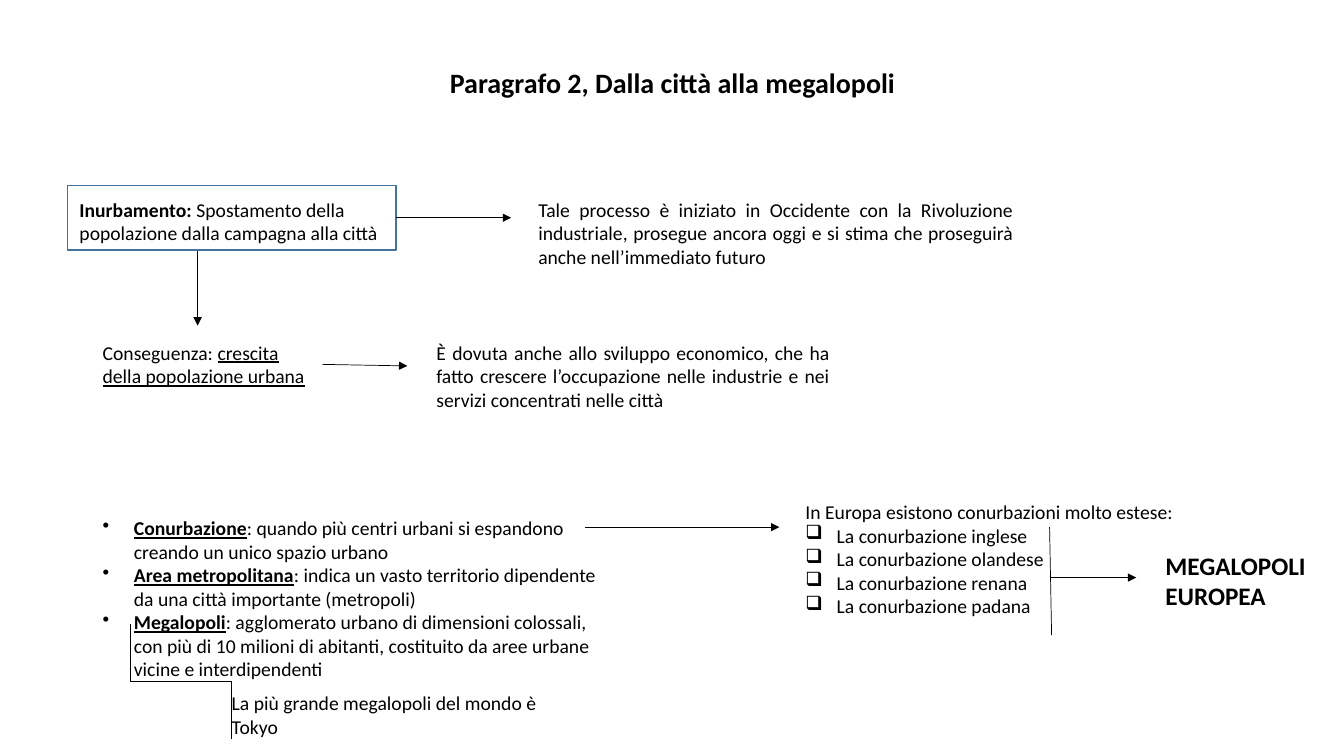
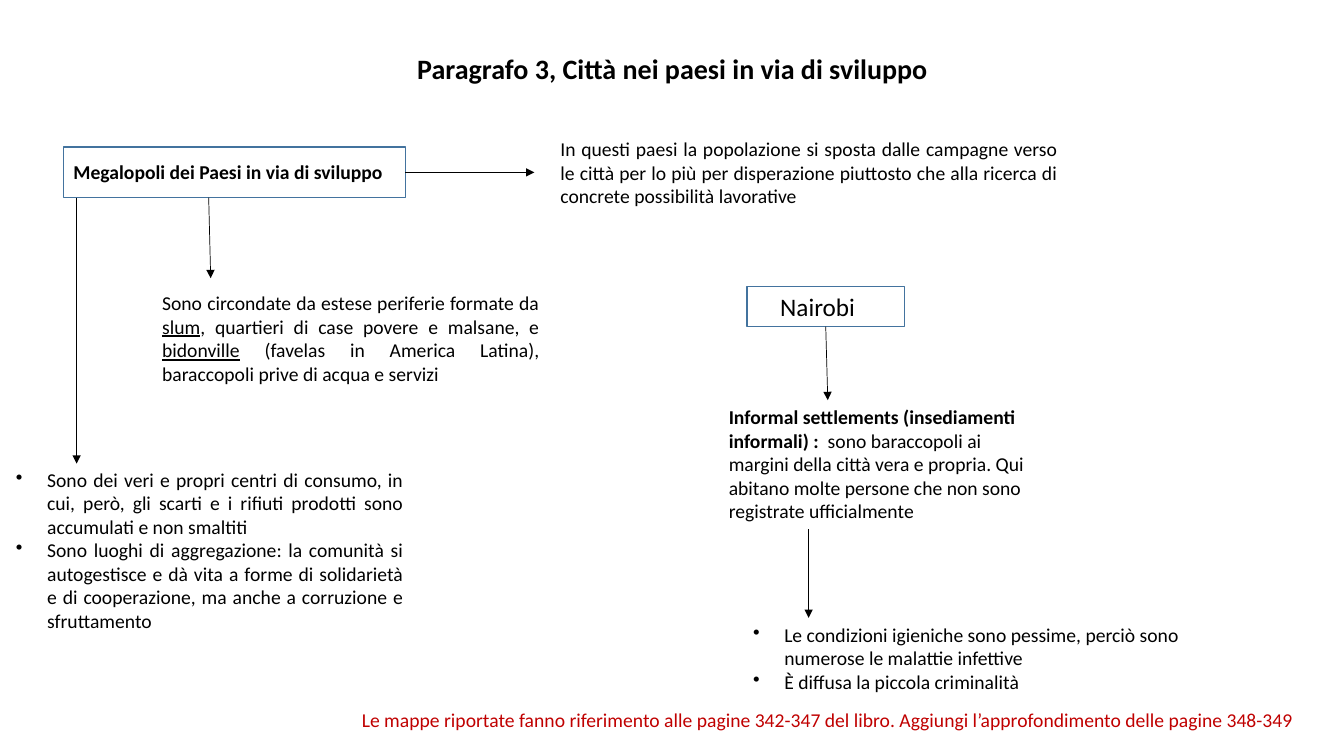
import pptx
import pptx.dml.color
import pptx.enum.shapes
import pptx.enum.text
import pptx.oxml
import pptx.oxml.ns
import pptx.util

Inches, Pt = pptx.util.Inches, pptx.util.Pt
RGB = pptx.dml.color.RGBColor.from_string
ALIGN = pptx.enum.text.PP_ALIGN
CONNECTOR = pptx.enum.shapes.MSO_CONNECTOR
qn = pptx.oxml.ns.qn

COLORS = {"text": "000000", "frame": "43739E", "note": "C00000"}
FONT = "Calibri"
INDENT = 0.31
DOT, BOX = "•", "❑"


def add_text(s, at, paras, size=14, align=None, color="text"):
    """Add a text box; each paragraph is (bullet, (text, flags), ...), flags being b and/or u."""
    sp = s.shapes.add_textbox(*map(Inches, at))
    tf = sp.text_frame
    tf.word_wrap = True
    tf.auto_size = pptx.enum.text.MSO_AUTO_SIZE.SHAPE_TO_FIT_TEXT
    for i, (bullet, *runs) in enumerate(paras):
        p = tf.add_paragraph() if i else tf.paragraphs[0]
        p.alignment = align
        if bullet:
            pPr = p._p.get_or_add_pPr()
            pPr.set("marL", str(Inches(INDENT)))
            pPr.set("indent", str(-Inches(INDENT)))
            pptx.oxml.ns.qn("a:buChar")
            pptx.oxml.xmlchemy.OxmlElement("a:buChar")
            bu = pPr.makeelement(qn("a:buChar"), {"char": bullet})
            pPr.append(bu)
        for text, flags in runs:
            r = p.add_run()
            r.text = text
            style = {"name": FONT, "size": Pt(size), "bold": "b" in flags, "underline": "u" in flags}
            for name, value in style.items():
                setattr(r.font, name, value)
            r.font.color.rgb = RGB(COLORS[color])
    return sp


def add_line(s, start, end, arrow=True, kind=CONNECTOR.STRAIGHT, source=None, site=3):
    """Add a thin line, joined at its start to a side of source when one is given."""
    c = s.shapes.add_connector(kind, *map(Inches, (*start, *end)))
    if source is not None:
        c.begin_connect(source, site)
    c.line.color.rgb = RGB(COLORS["text"])
    c.line.width = Pt(0.5)
    if arrow:
        ln = c.line._get_or_add_ln()
        ln.append(ln.makeelement(qn("a:tailEnd"), {"type": "triangle"}))
    spPr = c._element.spPr
    spPr.append(spPr.makeelement(qn("a:effectLst"), {}))
    return c


prs = pptx.Presentation()
prs.slide_width, prs.slide_height = Inches(13.33), Inches(7.5)

# Titles and frames of both slides
slides, frames = [], []
for title, height, boxes in [
    ("Paragrafo 2, Dalla città alla megalopoli", 0.87, [(0.67, 1.84, 3.26, 0.64)]),
    ("Paragrafo 3, Città nei paesi in via di sviluppo", 0.59,
     [(0.63, 1.46, 3.39, 0.5), (7.41, 2.84, 1.56, 0.4)]),
]:
    s = prs.slides.add_slide(prs.slide_layouts[6])
    slides.append(s)
    tf = add_text(s, (0.92, 0.4, 11.5, height), [("", (title, "b"))], 20, ALIGN.CENTER).text_frame
    tf.auto_size = pptx.enum.text.MSO_AUTO_SIZE.NONE
    tf.vertical_anchor = pptx.enum.text.MSO_ANCHOR.MIDDLE
    tf.paragraphs[0].line_spacing = 0.9
    for box in boxes:
        sp = s.shapes.add_shape(pptx.enum.shapes.MSO_SHAPE.RECTANGLE, *map(Inches, box))
        sp.shadow.inherit = False
        sp.fill.background()
        sp.line.color.rgb = RGB(COLORS["frame"])
        sp.line.width = Pt(1)
        frames.append(sp)
urbanization, megacities, nairobi = frames

# Slide 1: from the city to the megalopolis
s = slides[0]
add_text(s, (0.69, 1.91, 3.36, 0.57), [
    ("", ("Inurbamento: ", "b"), ("Spostamento della popolazione dalla campagna alla città", ""))])
add_text(s, (5.24, 1.91, 4.91, 0.81), [
    ("", ("Tale processo è iniziato in Occidente con la Rivoluzione industriale, prosegue ancora oggi "
          "e si stima che proseguirà anche nell’immediato futuro", ""))], align=ALIGN.JUSTIFY)
growth = add_text(s, (0.92, 3.33, 2.28, 0.57), [
    ("", ("Conseguenza: ", ""), ("crescita della popolazione urbana", "u"))])
add_text(s, (4.23, 3.33, 4.1, 0.81), [
    ("", ("È dovuta anche allo sviluppo economico, che ha fatto crescere l’occupazione nelle industrie "
          "e nei servizi concentrati nelle città", ""))], align=ALIGN.JUSTIFY)
add_text(s, (0.92, 5.07, 5.13, 2.05), [(DOT, (term, "bu"), (meaning, "")) for term, meaning in [
    ("Conurbazione", ": quando più centri urbani si espandono creando un unico spazio urbano"),
    ("Area metropolitana", ": indica un vasto territorio dipendente da una città importante (metropoli)"),
    ("Megalopoli", ": agglomerato urbano di dimensioni colossali, con più di 10 milioni di abitanti, "
                   "costituito da aree urbane vicine e interdipendenti"),
]])
add_text(s, (7.89, 4.91, 5.59, 1.28),
         [("", ("In Europa esistono conurbazioni molto estese: ", ""))]
         + [(BOX, (f"La conurbazione {name}", "")) for name in ("inglese", "olandese", "renana", "padana")],
         align=ALIGN.JUSTIFY)
add_text(s, (11.46, 5.41, 1.61, 0.71), [("", ("MEGALOPOLI EUROPEA", "b"))], 18)
add_text(s, (2.2, 6.81, 3.68, 0.57), [("", ("La più grande megalopoli del mondo è Tokyo", ""))])

add_line(s, (3.93, 2.16), (5.07, 2.16), source=urbanization)
add_line(s, (1.96, 2.49), (1.96, 3.23))
add_line(s, (3.2, 3.61), (4.04, 3.63), source=growth)
add_line(s, (5.8, 5.23), (7.73, 5.23))
add_line(s, (10.41, 5.23), (10.43, 6.3), arrow=False)
add_line(s, (10.41, 5.73), (11.27, 5.73))
elbow = add_line(s, (1.22, 6.26), (2.36, 7.26), arrow=False, kind=CONNECTOR.ELBOW)
xfrm = elbow._element.spPr.find(qn("a:xfrm"))
xfrm.set("rot", str(270 * 60000))
xfrm.set("flipH", "1")

# Slide 2: cities in developing countries
s = slides[1]
add_text(s, (0.63, 1.54, 4.06, 0.34), [("", ("Megalopoli dei Paesi in via di sviluppo", "b"))])
add_text(s, (1.51, 2.84, 3.94, 1.04), [
    ("", ("Sono circondate da estese periferie formate da ", ""), ("slum", "u"),
     (", quartieri di case povere e malsane, e ", ""), ("bidonville", "u"),
     (" (favelas in America Latina), baraccopoli prive di acqua e servizi", ""))], align=ALIGN.JUSTIFY)
add_text(s, (5.46, 1.31, 5.13, 0.81), [
    ("", ("In questi paesi la popolazione si sposta dalle campagne verso le città per lo più per "
          "disperazione piuttosto che alla ricerca di concrete possibilità lavorative", ""))],
         align=ALIGN.JUSTIFY)
add_text(s, (0.06, 4.59, 4.04, 1.75), [
    (DOT, ("Sono dei veri e propri centri di consumo, in cui, però, gli scarti e i rifiuti prodotti "
           "sono accumulati e non smaltiti", "")),
    (DOT, ("Sono luoghi di aggregazione: la comunità si autogestisce e dà vita a forme di solidarietà "
           "e di cooperazione, ma anche a corruzione e sfruttamento", ""))], align=ALIGN.JUSTIFY)
add_text(s, (7.64, 2.84, 4.06, 0.4), [("", ("Nairobi", ""))], 18)
add_text(s, (7.13, 3.97, 3.27, 1.28), [
    ("", ("Informal settlements (insediamenti informali) : ", "b"),
     (" sono baraccopoli ai margini della città vera e propria. Qui abitano molte persone che non "
      "sono registrate ufficialmente", ""))])
add_text(s, (7.37, 6.13, 4.61, 0.81), [
    (DOT, ("Le condizioni igieniche sono pessime, perciò sono numerose le malattie infettive", "")),
    (DOT, ("È diffusa la piccola criminalità", ""))])
add_text(s, (3.49, 6.97, 9.85, 0.34), [
    ("", ("Le mappe riportate fanno riferimento alle pagine 342-347 del libro. "
          "Aggiungi l’approfondimento delle pagine 348-349", ""))], color="note")

add_line(s, (4.02, 1.71), (5.3, 1.71), source=megacities)
add_line(s, (2.07, 1.96), (2.09, 2.76))
add_line(s, (0.76, 1.96), (0.76, 4.6))
add_line(s, (8.19, 3.24), (8.21, 3.97), source=nairobi, site=2)
add_line(s, (8.02, 5.25), (8.02, 6.13))

prs.save("out.pptx")
